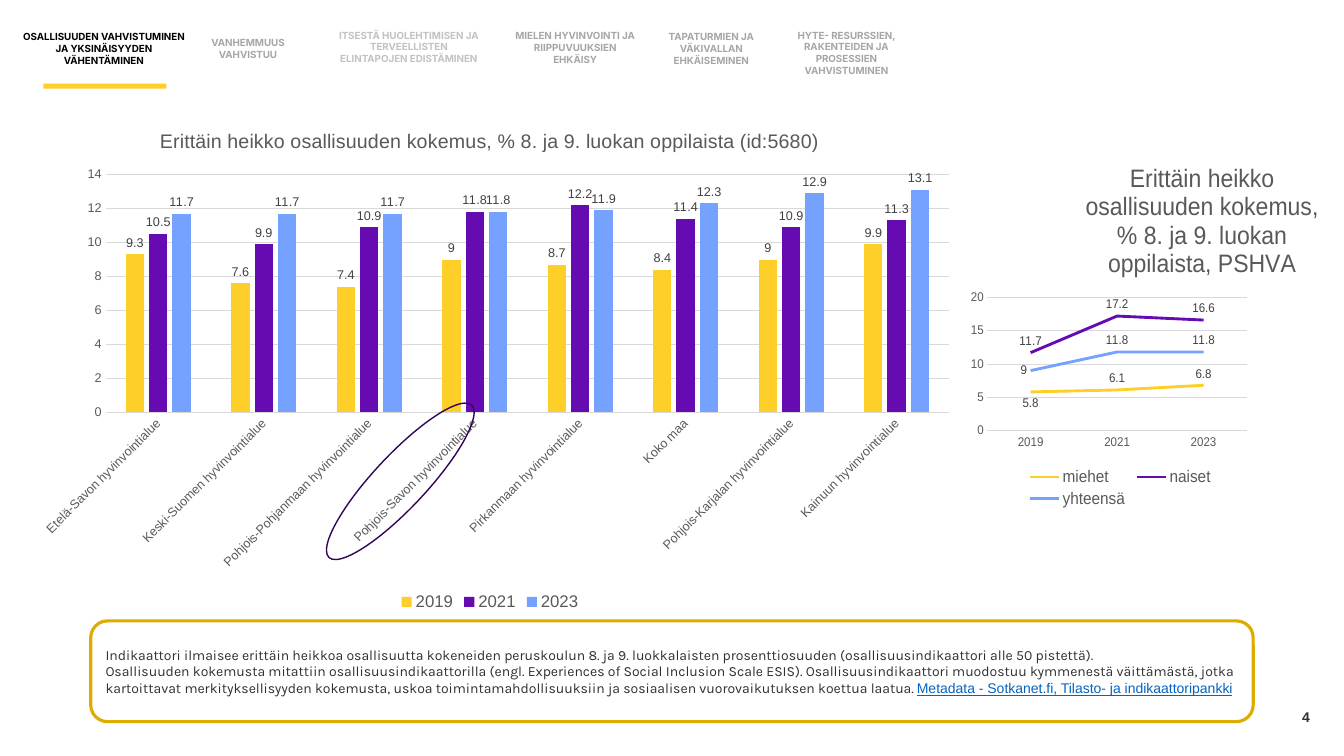
from lxml import etree
from pptx import Presentation
from pptx.chart.data import CategoryChartData
from pptx.dml.color import RGBColor
from pptx.enum.chart import XL_CHART_TYPE as ChartType, XL_LABEL_POSITION as LabelPos
from pptx.enum.chart import XL_LEGEND_POSITION as LegendPos, XL_TICK_MARK as TickMark
from pptx.enum.shapes import MSO_SHAPE as Preset
from pptx.enum.text import MSO_ANCHOR as Anchor, PP_ALIGN as Align
from pptx.oxml import parse_xml
from pptx.oxml.ns import nsdecls, qn
from pptx.util import Inches, Pt

BLACK = RGBColor(0x00, 0x00, 0x00)
INK = RGBColor(0x30, 0x30, 0x30)
LABEL = RGBColor(0x40, 0x40, 0x40)
AXIS = RGBColor(0x59, 0x59, 0x59)
MUTED = RGBColor(0xA6, 0xA6, 0xA6)
FAINT = RGBColor(0xC2, 0xC2, 0xC2)
GRID = RGBColor(0xD9, 0xD9, 0xD9)
YELLOW = RGBColor(0xFF, 0xCF, 0x29)
GOLD = RGBColor(0xDE, 0xAC, 0x00)
PURPLE = RGBColor(0x66, 0x0A, 0xB2)
DARK_PURPLE = RGBColor(0x33, 0x05, 0x59)
BLUE = RGBColor(0x75, 0xA1, 0xFF)
LINK = RGBColor(0x05, 0x63, 0xC1)
SERIES_COLORS = [YELLOW, PURPLE, BLUE]

TABS = [
    (0.22, 0.36, 1.62, 0.24, BLACK, ["OSALLISUUDEN VAHVISTUMINEN JA YKSINÄISYYDEN VÄHENTÄMINEN"]),
    (1.85, 0.42, 1.22, 0.12, MUTED, ["VANHEMMUUS VAHVISTUU"]),
    (3.35, 0.29, 1.41, 0.35, FAINT, ["ITSESTÄ HUOLEHTIMISEN JA TERVEELLISTEN ELINTAPOJEN EDISTÄMINEN"]),
    (5.07, 0.35, 1.27, 0.24, MUTED, ["MIELEN HYVINVOINTI JA RIIPPUVUUKSIEN EHKÄISY"]),
    (6.42, 0.36, 1.27, 0.24, MUTED, ["TAPATURMIEN JA VÄKIVALLAN EHKÄISEMINEN"]),
    (7.69, 0.35, 1.41, 0.35, MUTED, ["HYTE- RESURSSIEN, RAKENTEIDEN JA PROSESSIEN", "VAHVISTUMINEN"]),
]
INDICATOR = (
    "Indikaattori ilmaisee erittäin heikkoa osallisuutta kokeneiden peruskoulun 8. ja 9. "
    "luokkalaisten prosenttiosuuden (osallisuusindikaattori alle 50 pistettä)."
)
METHOD = (
    "Osallisuuden kokemusta mitattiin osallisuusindikaattorilla (engl. Experiences of Social "
    "Inclusion Scale ESIS). Osallisuusindikaattori muodostuu kymmenestä väittämästä, jotka "
    "kartoittavat merkityksellisyyden kokemusta, uskoa toimintamahdollisuuksiin ja sosiaalisen "
    "vuorovaikutuksen koettua laatua. "
)
SOURCE = "Metadata - Sotkanet.fi, Tilasto- ja indikaattoripankki"
AREAS = [
    "Etelä-Savon hyvinvointialue", "Keski-Suomen hyvinvointialue",
    "Pohjois-Pohjanmaan hyvinvointialue", "Pohjois-Savon hyvinvointialue",
    "Pirkanmaan hyvinvointialue", "Koko maa",
    "Pohjois-Karjalan hyvinvointialue", "Kainuun hyvinvointialue",
]
BY_AREA = {
    "2019": [9.3, 7.6, 7.4, 9, 8.7, 8.4, 9, 9.9],
    "2021": [10.5, 9.9, 10.9, 11.8, 12.2, 11.4, 10.9, 11.3],
    "2023": [11.7, 11.7, 11.7, 11.8, 11.9, 12.3, 12.9, 13.1],
}
BY_GENDER = {"miehet": [5.8, 6.1, 6.8], "naiset": [11.7, 17.2, 16.6], "yhteensä": [9, 11.8, 11.8]}


class SlideBuilder:
    """Holds the style and the current slide."""

    def __init__(self, slide):
        self.slide = slide
        self.chart_font = "Arial"

    def style(self, font, size, color, name="Arial", bold=False):
        font.name, font.size, font.bold = name, Pt(size), bold
        font.color.rgb = color

    def span(self, para, text, size, color, name="Arial", bold=False):
        span = para.add_run()
        span.text = text
        self.style(span.font, size, color, name, bold)
        return span

    def text(self, place, lines, size, color, name, align):
        box = self.slide.shapes.add_textbox(*map(Inches, place))
        frame = box.text_frame
        frame.word_wrap = True
        frame.vertical_anchor = Anchor.MIDDLE
        frame.margin_left = frame.margin_right = frame.margin_top = frame.margin_bottom = 0
        for index, line in enumerate(lines):
            para = frame.add_paragraph() if index else frame.paragraphs[0]
            para.alignment = align
            self.span(para, line, size, color, name, True)

    def shape(self, preset, place, fill=None, line=None, width=1.0, rotation=0):
        shape = self.slide.shapes.add_shape(preset, *map(Inches, place))
        shape.shadow.inherit = False
        shape.rotation = rotation
        if fill is None:
            shape.fill.background()
        else:
            shape.fill.solid()
            shape.fill.fore_color.rgb = fill
        if line is None:
            shape.line.fill.background()
        else:
            shape.line.color.rgb = line
            shape.line.width = Pt(width)
        return shape

    def layout(self, element, inner=False, **values):
        """Pins a chart part to fractions of the chart area."""
        for old in element.findall(qn("c:layout")):
            element.remove(old)
        layout = parse_xml(f"<c:layout {nsdecls('c')}><c:manualLayout/></c:layout>")
        settings = {"layoutTarget": "inner"} if inner else {}
        settings.update(xMode="edge", yMode="edge", **values)
        for key, value in settings.items():
            etree.SubElement(layout[0], qn(f"c:{key}")).set("val", str(value))
        before = [e for e in element if e.tag in (qn("c:tx"), qn("c:legendPos"))]
        element.insert(element.index(before[-1]) + 1 if before else 0, layout)

    def chart(self, kind, place, categories, series, title, title_size, top, step, plot_area):
        data = CategoryChartData()
        data.categories = categories
        for name, values in series.items():
            data.add_series(name, values)
        chart = self.slide.shapes.add_chart(kind, *map(Inches, place), data).chart
        self.style(chart.font, 10, BLACK, self.chart_font)
        chart.has_title = True
        self.span(chart.chart_title.text_frame.paragraphs[0], title, title_size, AXIS)
        chart.has_legend = True
        chart.legend.position = LegendPos.BOTTOM
        chart.legend.include_in_layout = False
        self.style(chart.legend.font, 12, AXIS)
        for axis in (chart.category_axis, chart.value_axis):
            axis.major_tick_mark = axis.minor_tick_mark = TickMark.NONE
            self.style(axis.tick_labels.font, 9, AXIS)
        chart.category_axis.format.line.color.rgb = GRID
        chart.category_axis.format.line.width = Pt(0.75)
        scale = chart.value_axis
        scale.minimum_scale, scale.maximum_scale, scale.major_unit = 0, top, step
        scale.format.line.fill.background()
        scale.major_gridlines.format.line.color.rgb = GRID
        scale.major_gridlines.format.line.width = Pt(0.75)
        for group, color in zip(chart.plots[0].series, SERIES_COLORS):
            labels = group.data_labels
            labels.show_value = True
            self.style(labels.font, 9, LABEL)
            if kind == ChartType.LINE:
                group.smooth = False
                group.format.line.color.rgb = color
                group.format.line.width = Pt(2.25)
                labels.position = LabelPos.ABOVE
            else:
                group.format.fill.solid()
                group.format.fill.fore_color.rgb = color
                labels.position = LabelPos.OUTSIDE_END
        chart.plots[0].vary_by_categories = False
        area = chart.plots[0].series[0].format._element.getparent().getparent()
        self.layout(area, True, **plot_area)
        return chart


def main():
    deck = Presentation()
    deck.slide_width, deck.slide_height = Inches(13.33), Inches(7.5)
    page = SlideBuilder(deck.slides.add_slide(deck.slide_layouts[6]))

    page.text((9.99, 6.91, 3, 0.4), ["4"], 10, INK, "Arial", Align.RIGHT)
    for *place, color, lines in TABS:
        page.text(place, lines, 7, color, "Inter", Align.CENTER)
    page.shape(Preset.RECTANGLE, (0.43, 0.83, 1.22, 0.05), fill=YELLOW)

    note = page.shape(Preset.ROUNDED_RECTANGLE, (0.9, 6.16, 11.53, 1), line=GOLD, width=2.25)
    note.text_frame.word_wrap = True
    note.text_frame.vertical_anchor = Anchor.MIDDLE
    first, second = note.text_frame.paragraphs[0], note.text_frame.add_paragraph()
    first.alignment = second.alignment = Align.LEFT
    page.span(first, INDICATOR, 10, INK, "Karla")
    page.span(second, METHOD, 10, INK, "Karla")
    page.span(second, SOURCE, 10, LINK).font.underline = True

    columns = page.chart(
        ChartType.COLUMN_CLUSTERED, (0.21, 1.08, 9.3, 5.02), AREAS, BY_AREA,
        "Erittäin heikko osallisuuden kokemus, % 8. ja 9. luokan oppilaista (id:5680)",
        14, 14, 2, {"x": 0.09, "y": 0.13, "w": 0.9, "h": 0.47})
    columns.plots[0].gap_width, columns.plots[0].overlap = 219, -27
    columns.category_axis.tick_labels.font._element.getparent().getparent().getparent().find(
        qn("a:bodyPr")).set("rot", "-2700000")

    lines = page.chart(
        ChartType.LINE, (9.6, 1.41, 3.52, 3.67), ["2019", "2021", "2023"], BY_GENDER,
        "Erittäin heikko osallisuuden kokemus, % 8. ja 9. luokan oppilaista, PSHVA",
        18, 20, 5, {"x": 0.06, "y": 0.42, "w": 0.8, "h": 0.36})
    page.layout(lines.chart_title._element, x=0.35, y=0.04)
    page.layout(lines.legend._element, x=0.17, y=0.87, w=0.6, h=0.13)
    for index, position in ((0, LabelPos.BELOW), (2, LabelPos.LEFT)):
        label = lines.plots[0].series[index].points[0].data_label
        page.style(label.font, 9, LABEL)
        label.position = position

    page.shape(Preset.OVAL, (3.71, 3.74, 0.52, 2.07), line=DARK_PURPLE, rotation=43.1)
    deck.save("out.pptx")


if __name__ == "__main__":
    main()
